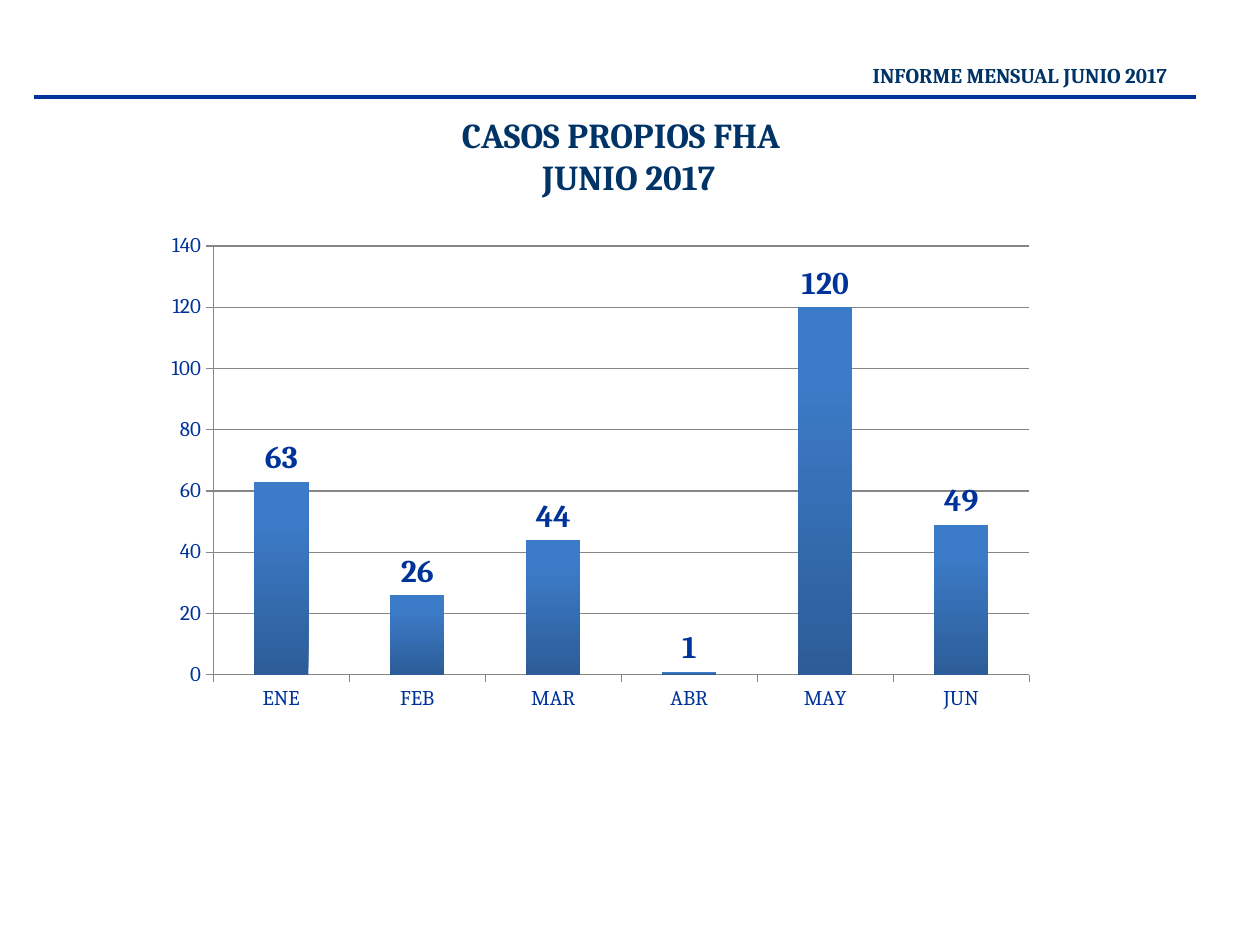
"""Build the monthly report slide with a column chart of FHA cases."""
import pptx
import pptx.chart.data
import pptx.dml.color
import pptx.enum.chart
import pptx.enum.shapes
import pptx.enum.text
import pptx.oxml
import pptx.oxml.ns
import pptx.util

FONT = "Cambria"
NAVY, BLUE, GRAY = "003366", "003399", "868686"
BAR_GRADIENT = [(0, "2C5D98"), (0.8, "3C7BC7")]
WIDTH, HEIGHT = 10, 7.5

TITLE = ["CASOS PROPIOS FHA ", " JUNIO 2017"]
HEADER = ["INFORME MENSUAL JUNIO 2017"]
CASES = {"ENE": 63, "FEB": 26, "MAR": 44, "ABR": 1, "MAY": 120, "JUN": 49}

TITLE_BOX = (0.43, 0.85, 9.06, 0.77)
HEADER_BOX = (6.77, 0.45, 2.65, 0.3)
CHART_BOX = (1.22, 1.78, 7.09, 3.94)
RULE = (0.27, 0.77, 9.49, 0.77)


def color(value):
    return pptx.dml.color.RGBColor.from_string(value)


def inches(values):
    return [pptx.util.Inches(value) for value in values]


def style_font(font, size, value, bold=False):
    font.name = FONT
    font.size = pptx.util.Pt(size)
    font.bold = bold
    font.color.rgb = color(value)


def add_text(slide, box, lines, size, wrap):
    frame = slide.shapes.add_textbox(*inches(box)).text_frame
    frame.word_wrap = wrap
    frame.auto_size = pptx.enum.text.MSO_AUTO_SIZE.SHAPE_TO_FIT_TEXT
    for index, line in enumerate(lines):
        paragraph = frame.add_paragraph() if index else frame.paragraphs[0]
        paragraph.alignment = pptx.enum.text.PP_ALIGN.CENTER
        run = paragraph.add_run()
        run.text = line
        style_font(run.font, size, NAVY, True)


def add_rule(slide):
    rule = slide.shapes.add_connector(
        pptx.enum.shapes.MSO_CONNECTOR.STRAIGHT, *inches(RULE))
    rule.line.color.rgb = color(BLUE)
    rule.line.width = pptx.util.Pt(2.25)
    properties = rule._element.find(pptx.oxml.ns.qn("p:spPr"))
    properties.append(pptx.oxml.parse_xml(
        f'<a:effectLst {pptx.oxml.ns.nsdecls("a")}/>'))


def style_line(line):
    line.color.rgb = color(GRAY)
    line.width = pptx.util.Pt(0.75)


def add_cases_chart(slide):
    data = pptx.chart.data.CategoryChartData()
    data.categories = list(CASES)
    data.add_series("Series 1", list(CASES.values()))
    chart = slide.shapes.add_chart(
        pptx.enum.chart.XL_CHART_TYPE.COLUMN_CLUSTERED,
        *inches(CHART_BOX), data).chart
    chart.has_legend = False
    chart.has_title = False
    style_font(chart.font, 18, BLUE)

    for axis in (chart.category_axis, chart.value_axis):
        axis.major_tick_mark = pptx.enum.chart.XL_TICK_MARK.OUTSIDE
        axis.minor_tick_mark = pptx.enum.chart.XL_TICK_MARK.NONE
        style_font(axis.tick_labels.font, 12, BLUE)
        style_line(axis.format.line)
    axis = chart.value_axis
    axis.minimum_scale, axis.maximum_scale, axis.major_unit = 0, 140, 20
    axis.has_major_gridlines = True
    style_line(axis.major_gridlines.format.line)

    plot = chart.plots[0]
    plot.gap_width = 150
    plot.vary_by_categories = False
    series = plot.series[0]
    fill = series.format.fill
    fill.gradient()
    fill.gradient_angle = 90
    for stop, (position, value) in zip(fill.gradient_stops, BAR_GRADIENT):
        stop.position = position
        stop.color.rgb = color(value)
    labels = series.data_labels
    labels.show_value = True
    labels.position = pptx.enum.chart.XL_LABEL_POSITION.OUTSIDE_END
    style_font(labels.font, 18, BLUE, True)


def main():
    presentation = pptx.Presentation()
    presentation.slide_width, presentation.slide_height = inches((WIDTH, HEIGHT))
    slide = presentation.slides.add_slide(presentation.slide_layouts[6])
    add_text(slide, TITLE_BOX, TITLE, 20, True)
    add_rule(slide)
    add_text(slide, HEADER_BOX, HEADER, 12, False)
    add_cases_chart(slide)
    presentation.save("out.pptx")


if __name__ == "__main__":
    main()
